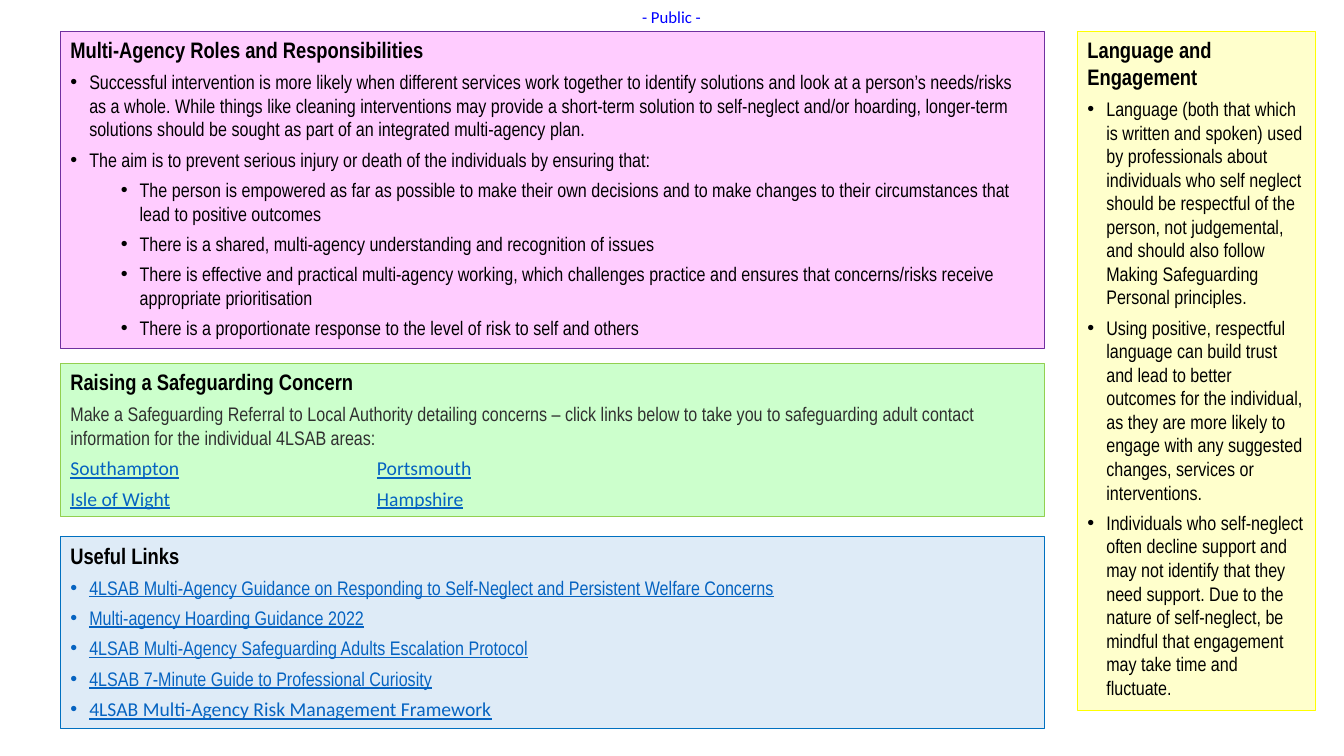
from dataclasses import dataclass

from lxml.etree import SubElement
from pptx import Presentation
from pptx.dml.color import RGBColor
from pptx.enum.shapes import MSO_SHAPE
from pptx.enum.text import MSO_ANCHOR, MSO_AUTO_SIZE, PP_ALIGN
from pptx.oxml.ns import qn
from pptx.util import Pt


@dataclass(frozen=True)
class Theme:
    """Colours, fonts and type sizes used on the slide."""
    narrow: str = "Arial Narrow"
    sans: str = "Calibri"
    heading: float = 16
    body: float = 14
    label: float = 12
    gap: float = 4.9
    hang: float = 13.5
    step: float = 36
    tab: float = 219
    black: str = "000000"
    grey: str = "303030"
    blue: str = "0563C1"
    public: str = "0000FF"
    yellow: tuple = ("FFFFCC", "FFFF00")
    pink: tuple = ("FFCCFF", "7030A0")
    green: tuple = ("CCFFCC", "92D050")
    pale_blue: tuple = ("DEEBF7", "0070C0")


T = Theme()
HEADING = {"name": T.narrow, "size": Pt(T.heading), "bold": True, "color": T.black}
BODY = {"name": T.narrow, "size": Pt(T.body), "bold": False, "color": T.black}
INTRO = {**BODY, "color": T.grey}
LINK = {**BODY, "color": T.blue, "underline": True}
SANS_LINK = {**LINK, "name": T.sans}
SPACER = {**SANS_LINK, "underline": False}
LABEL = {"name": T.sans, "size": Pt(T.label), "color": T.public}


def add_run(p, text, style):
    """Add a run formatted from a dict of font values."""
    r = p.add_run()
    r.text = text
    for key, value in style.items():
        if key == "color":
            r.font.color.rgb = RGBColor.from_string(value)
        else:
            setattr(r.font, key, value)


def add_line(tf, *runs):
    """Add a left-aligned paragraph, reusing the first empty one."""
    p = tf.paragraphs[0] if not tf.paragraphs[0].runs else tf.add_paragraph()
    p.alignment = PP_ALIGN.LEFT
    p.space_after = Pt(T.gap)
    for text, style in runs:
        add_run(p, text, style)
    return p


def add_bullet(tf, text, style=BODY, level=0):
    """Add a bulleted paragraph with a hanging indent."""
    p = add_line(tf, (text, style))
    p.level = level
    pPr = p._p.get_or_add_pPr()
    pPr.set("marL", str(Pt(T.hang + level * T.step)))
    pPr.set("indent", str(-Pt(T.hang)))
    SubElement(pPr, qn("a:buFont")).set("typeface", "Arial")
    SubElement(pPr, qn("a:buChar")).set("char", "•")


def add_link_row(tf, left, right):
    """Add two links set apart by a tab stop."""
    p = add_line(tf, (left, SANS_LINK), ("\t", SPACER), (right, SANS_LINK))
    tabs = SubElement(p._p.get_or_add_pPr(), qn("a:tabLst"))
    tab = SubElement(tabs, qn("a:tab"))
    tab.set("pos", str(Pt(T.tab)))
    tab.set("algn", "l")


def add_panel(s, box, colours, heading):
    """Draw a coloured panel with a heading and return its text frame."""
    sp = s.shapes.add_shape(MSO_SHAPE.RECTANGLE, *map(Pt, box))
    fill, line = map(RGBColor.from_string, colours)
    sp.shadow.inherit = False
    sp.fill.solid()
    sp.fill.fore_color.rgb = fill
    sp.line.color.rgb = line
    sp.line.width = Pt(0.75)
    tf = sp.text_frame
    tf.word_wrap = True
    tf.auto_size = MSO_AUTO_SIZE.SHAPE_TO_FIT_TEXT
    tf.vertical_anchor = MSO_ANCHOR.TOP
    add_line(tf, (heading, HEADING))
    return tf


def add_label(s, box):
    """Place the classification label."""
    tf = s.shapes.add_textbox(*map(Pt, box)).text_frame
    for side in ("left", "top", "right", "bottom"):
        setattr(tf, f"margin_{side}", 0)
    tf.auto_size = MSO_AUTO_SIZE.SHAPE_TO_FIT_TEXT
    add_run(tf.paragraphs[0], "- Public -", LABEL)


def add_language(s, box):
    """Build the language and engagement column."""
    tf = add_panel(s, box, T.yellow, "Language and Engagement")
    for text in (
        "Language (both that which is written and spoken) used by professionals about "
        "individuals who self neglect should be respectful of the person, not judgemental, "
        "and should also follow Making Safeguarding Personal principles.",
        "Using positive, respectful language can build trust and lead to better outcomes "
        "for the individual, as they are more likely to engage with any suggested changes, "
        "services or interventions.",
        "Individuals who self-neglect often decline support and may not identify that they "
        "need support. Due to the nature of self-neglect, be mindful that engagement may "
        "take time and fluctuate.",
    ):
        add_bullet(tf, text)


def add_roles(s, box):
    """Build the roles and responsibilities panel."""
    tf = add_panel(s, box, T.pink, "Multi-Agency Roles and Responsibilities")
    for level, text in (
        (0, "Successful intervention is more likely when different services work together to "
            "identify solutions and look at a person’s needs/risks as a whole. While things "
            "like cleaning interventions may provide a short-term solution to self-neglect "
            "and/or hoarding, longer-term solutions should be sought as part of an integrated "
            "multi-agency plan."),
        (0, "The aim is to prevent serious injury or death of the individuals by ensuring that:"),
        (1, "The person is empowered as far as possible to make their own decisions and to make "
            "changes to their circumstances that lead to positive outcomes"),
        (1, "There is a shared, multi-agency understanding and recognition of issues"),
        (1, "There is effective and practical multi-agency working, which challenges practice "
            "and ensures that concerns/risks receive appropriate prioritisation"),
        (1, "There is a proportionate response to the level of risk to self and others"),
    ):
        add_bullet(tf, text, level=level)


def add_concern(s, box):
    """Build the safeguarding concern panel."""
    tf = add_panel(s, box, T.green, "Raising a Safeguarding Concern")
    add_line(tf, (
        "Make a Safeguarding Referral to Local Authority detailing concerns – click links below "
        "to take you to safeguarding adult contact information for the individual 4LSAB areas:",
        INTRO))
    for left, right in (("Southampton", "Portsmouth"), ("Isle of Wight", "Hampshire")):
        add_link_row(tf, left, right)


def add_links(s, box):
    """Build the useful links panel."""
    tf = add_panel(s, box, T.pale_blue, "Useful Links")
    for text, style in (
        ("4LSAB Multi-Agency Guidance on Responding to Self-Neglect and Persistent Welfare "
         "Concerns", LINK),
        ("Multi-agency Hoarding Guidance 2022", LINK),
        ("4LSAB Multi-Agency Safeguarding Adults Escalation Protocol", LINK),
        ("4LSAB 7-Minute Guide to Professional Curiosity", LINK),
        ("4LSAB Multi-Agency Risk Management Framework", SANS_LINK),
    ):
        add_bullet(tf, text, style)


def main():
    """Build and save the slide."""
    prs = Presentation()
    prs.slide_width, prs.slide_height = Pt(960), Pt(540)
    s = prs.slides.add_slide(prs.slide_layouts[6])
    left, top, width = 43.2, 22.5, 702.7
    add_label(s, (458.6, 5, 44.6, 14.4))
    add_language(s, (769.7, top, 169.9, 485.3))
    add_roles(s, (left, top, width, 226.6))
    add_concern(s, (left, 259.7, width, 109.6))
    add_links(s, (left, 383.5, width, 136.8))
    prs.save("out.pptx")


if __name__ == "__main__":
    main()
